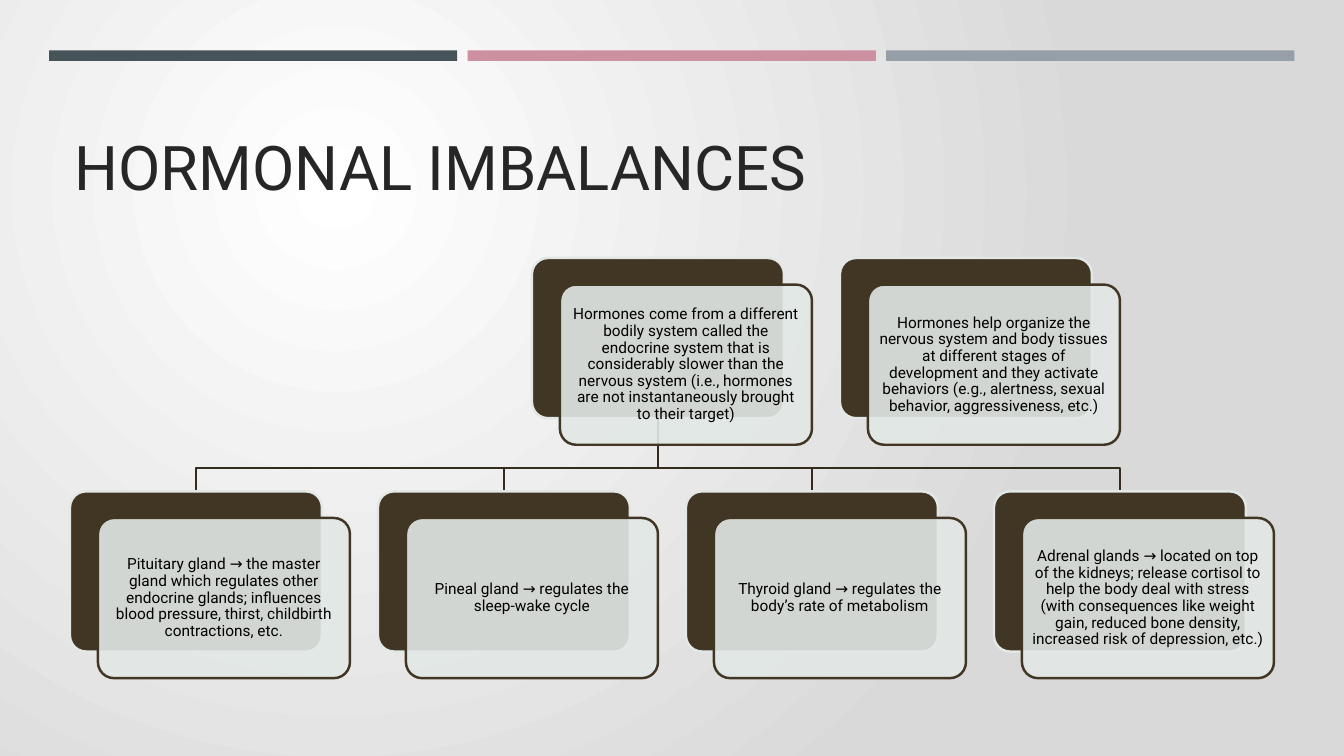
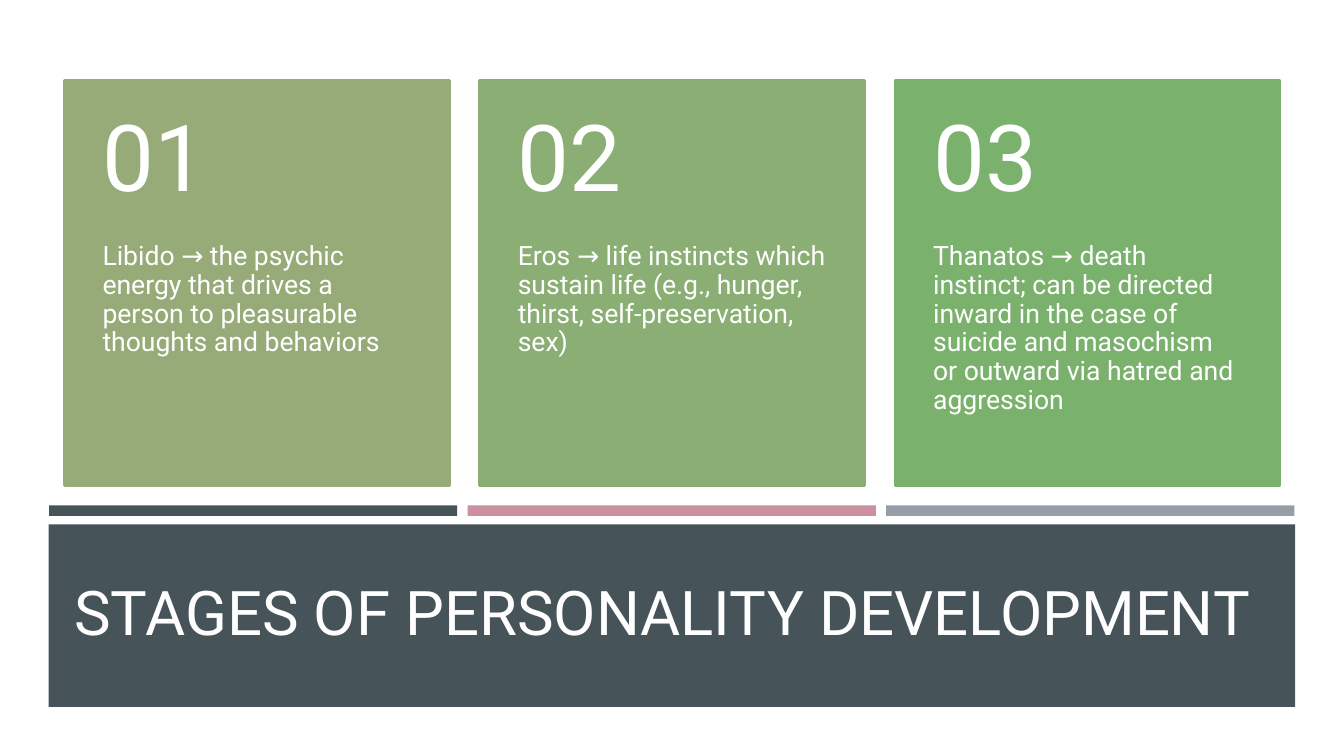
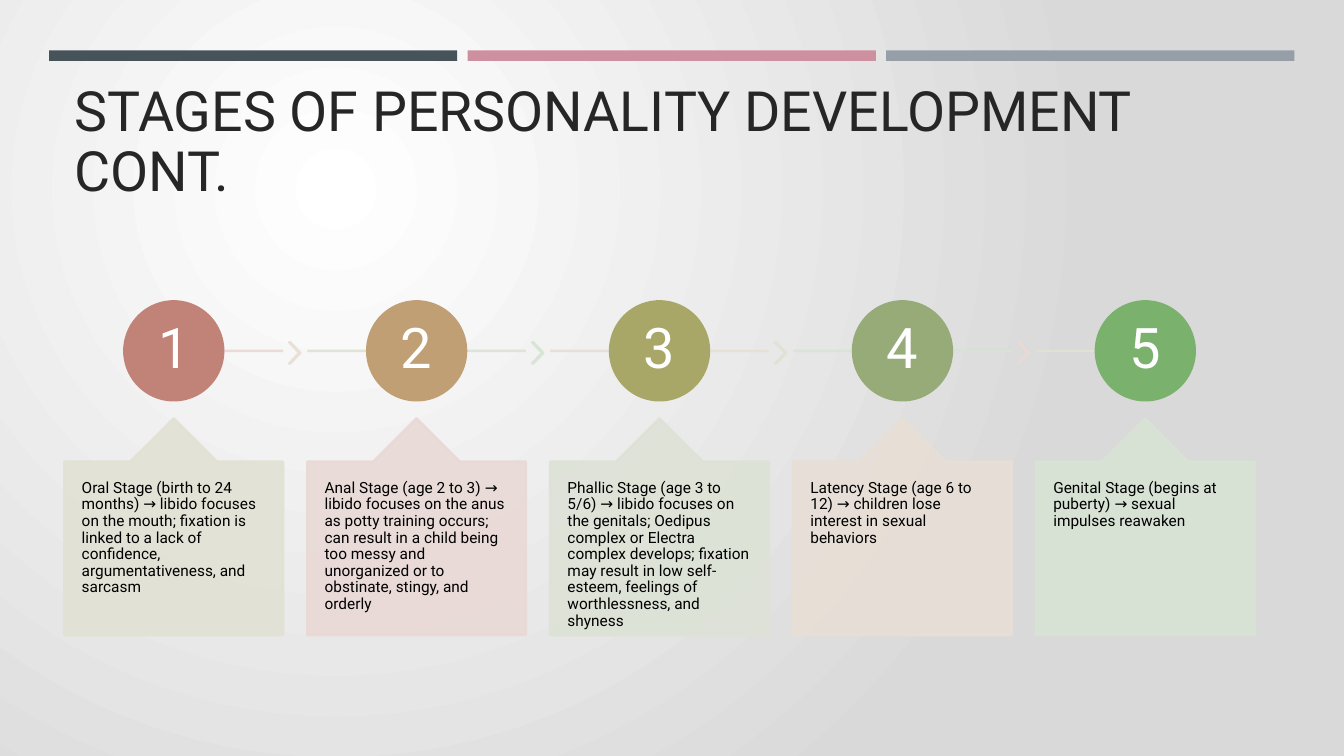
from dataclasses import dataclass

from lxml.etree import SubElement
from pptx import Presentation
from pptx.dml.color import RGBColor
from pptx.enum.shapes import MSO_CONNECTOR, MSO_SHAPE
from pptx.enum.text import MSO_ANCHOR, PP_ALIGN
from pptx.oxml.ns import qn
from pptx.util import Pt


@dataclass(frozen=True)
class Theme:
    font: str = "Roboto"
    white: str = "FFFFFF"
    black: str = "000000"
    title_ink: str = "262626"
    title_light: str = "FFFEFF"
    backdrop_edge: str = "D9D9D9"
    slate: str = "465359"
    bars: tuple = ("465359", "CC90A0", "969FA7")
    brown: str = "413524"
    branch: str = "342A1D"
    mist: str = "E2E8E6"
    panels: tuple = ("96AB78", "8AAE73", "7AB16D")
    stages: tuple = ("C18377", "C09F74", "A8A768", "96AB78", "7AB16D")
    tints: tuple = ("E9D9D6", "E8DFD6", "E1E1D4", "DDE2D6", "D7E4D4")
    title_size: float = 44
    long_title_size: float = 39.6
    panel_number_size: float = 66
    stage_number_size: float = 40
    panel_size: float = 19
    note_size: float = 11
    line_width: float = 1.75
    opacity: int = 90


THEME = Theme()
MARGIN = 46
CONTENT_WIDTH = 868.3

ROOT_NOTES = (
    "Hormones come from a different bodily system called the endocrine system that is "
    "considerably slower than the nervous system (i.e., hormones are not instantaneously "
    "brought to their target)",
    "Hormones help organize the nervous system and body tissues at different stages of "
    "development and they activate behaviors (e.g., alertness, sexual behavior, "
    "aggressiveness, etc.)",
)
GLAND_NOTES = (
    "Pituitary gland → the master gland which regulates other endocrine glands; influences "
    "blood pressure, thirst, childbirth contractions, etc.",
    "Pineal gland → regulates the sleep-wake cycle",
    "Thyroid gland → regulates the body’s rate of metabolism",
    "Adrenal glands → located on top of the kidneys; release cortisol to help the body deal "
    "with stress (with consequences like weight gain, reduced bone density, increased risk "
    "of depression, etc.)",
)
INSTINCTS = (
    "Libido → the psychic energy that drives a person to pleasurable thoughts and behaviors",
    "Eros → life instincts which sustain life (e.g., hunger, thirst, self-preservation, sex)",
    "Thanatos → death instinct; can be directed inward in the case of suicide and masochism "
    "or outward via hatred and aggression",
)
STAGE_NOTES = (
    "Oral Stage (birth to 24 months) → libido focuses on the mouth; fixation is linked to a "
    "lack of confidence, argumentativeness, and sarcasm",
    "Anal Stage (age 2 to 3) → libido focuses on the anus as potty training occurs; can "
    "result in a child being too messy and unorganized or to obstinate, stingy, and orderly",
    "Phallic Stage (age 3 to 5/6) → libido focuses on the genitals; Oedipus complex or "
    "Electra complex develops; fixation may result in low self-esteem, feelings of "
    "worthlessness, and shyness",
    "Latency Stage (age 6 to 12) → children lose interest in sexual behaviors",
    "Genital Stage (begins at puberty) → sexual impulses reawaken",
)


def rgb(value):
    return RGBColor.from_string(value)


def points(*lengths):
    return [Pt(length) for length in lengths]


def apply_format(target, values):
    for name, value in values.items():
        setattr(target, name, value)


def set_opacity(shape, percent):
    for color in shape.element.spPr.iter(qn("a:srgbClr")):
        SubElement(color, qn("a:alpha"), val=str(percent * 1000))


def set_line(shape, color):
    shape.line.color.rgb = rgb(color)
    shape.line.width = Pt(THEME.line_width)


def add_block(page, kind, area, fill, line=None, opacity=None, adjust=()):
    shape = page.shapes.add_shape(kind, *points(*area))
    shape.shadow.inherit = False
    shape.fill.solid()
    shape.fill.fore_color.rgb = rgb(fill)
    if line:
        set_line(shape, line)
    else:
        shape.line.fill.background()
    for index, value in enumerate(adjust):
        shape.adjustments[index] = value
    if opacity:
        set_opacity(shape, opacity)
    return shape


def write(box, words, size, color, align=PP_ALIGN.LEFT, anchor=MSO_ANCHOR.MIDDLE,
          insets=(7.2, 3.6, 7.2, 3.6)):
    """Set the text of a box; insets run left, top, right, bottom."""
    frame = box.text_frame
    sides = ("margin_left", "margin_top", "margin_right", "margin_bottom")
    apply_format(frame, dict(zip(sides, points(*insets))))
    apply_format(frame, {"word_wrap": True, "vertical_anchor": anchor})
    para = frame.paragraphs[0]
    apply_format(para, {"alignment": align, "line_spacing": 0.9})
    span = para.add_run()
    span.text = words
    apply_format(span.font, {"name": THEME.font, "size": Pt(size)})
    span.font.color.rgb = rgb(color)


def add_text(page, area, words, size, color, **layout):
    write(page.shapes.add_textbox(*points(*area)), words, size, color, **layout)


def add_bars(page, top):
    for index, color in enumerate(THEME.bars):
        add_block(page, MSO_SHAPE.RECTANGLE, (35 + 299 * index, top, 291.6, 7.5), color)


def set_radial_background(page):
    fill = page.background.fill
    fill.gradient()
    for stop, color in zip(fill.gradient_stops, (THEME.white, THEME.backdrop_edge)):
        stop.color.rgb = rgb(color)
    gradient = page.element.find(".//" + qn("a:gradFill"))
    gradient.remove(gradient.find(qn("a:lin")))
    circle = SubElement(gradient, qn("a:path"), {"path": "circle"})
    SubElement(circle, qn("a:fillToRect"), l="50000", t="50000", r="100000", b="100000")


def add_page(deck):
    return deck.slides.add_slide(deck.slide_layouts[6])


def add_titled_page(deck, title, size):
    page = add_page(deck)
    set_radial_background(page)
    add_bars(page, 36)
    add_text(page, (MARGIN, 55.5, CONTENT_WIDTH, 93.5), title, size, THEME.title_ink,
             anchor=MSO_ANCHOR.BOTTOM)
    return page


def add_branch(page, start, end, bend):
    """Draw a line that goes down to the bend, across, and down to the end."""
    corners = [(start[0], bend), (end[0], bend), end]
    builder = page.shapes.build_freeform(*points(*start), scale=1.0)
    builder.add_line_segments([points(*corner) for corner in corners], close=False)
    branch = builder.convert_to_shape()
    branch.shadow.inherit = False
    branch.fill.background()
    set_line(branch, THEME.branch)


def add_layered_card(page, left, top, width, height, words):
    kind = MSO_SHAPE.ROUNDED_RECTANGLE
    add_block(page, kind, (left, top, width, height), THEME.brown, THEME.mist, adjust=[0.1])
    front = add_block(page, kind, (left + 20, top + 19, width, height), THEME.mist,
                      THEME.brown, adjust=[0.1])
    front_color = front.element.spPr.find(qn("a:solidFill")).find(qn("a:srgbClr"))
    SubElement(front_color, qn("a:alpha"), val=str(THEME.opacity * 1000))
    write(front, words, THEME.note_size, THEME.black, align=PP_ALIGN.CENTER,
          insets=(3.6, 3.6, 3.6, 3.6))


def add_tint_line(page, start, end, y, color):
    line = page.shapes.add_connector(MSO_CONNECTOR.STRAIGHT, *points(start, y, end, y))
    set_line(line, color)
    set_opacity(line, THEME.opacity)
    SubElement(line.element.spPr, qn("a:effectLst"))


def build_hormones(deck):
    page = add_titled_page(deck, "HORMONAL IMBALANCES", THEME.title_size)
    left, pitch, width, height = 50, 220, 180, 114.4
    root_top, gland_top = 184.3, 351
    root_lefts = [left + pitch * (index + 1.5) for index in range(len(ROOT_NOTES))]
    gland_lefts = [left + pitch * index for index in range(len(GLAND_NOTES))]
    fork = (root_lefts[0] + width / 2, root_top + height)
    for gland_left in reversed(gland_lefts):
        add_branch(page, fork, (gland_left + width / 2, gland_top), 334.5)
    for lefts, top, notes in ((root_lefts, root_top, ROOT_NOTES),
                              (gland_lefts, gland_top, GLAND_NOTES)):
        for card_left, words in zip(lefts, notes):
            add_layered_card(page, card_left, top, width, height, words)


def build_instincts(deck):
    page = add_page(deck)
    page.background.fill.solid()
    page.background.fill.fore_color.rgb = rgb(THEME.white)
    add_bars(page, 361)
    add_block(page, MSO_SHAPE.RECTANGLE, (34.8, 374.5, 890.4, 130.5), THEME.slate)
    add_text(page, (MARGIN, 390.5, CONTENT_WIDTH, 98), "STAGES OF PERSONALITY DEVELOPMENT",
             THEME.title_size, THEME.title_light)
    top, width, height, number_height = 57.4, 275, 289.6, 116
    pitch = (CONTENT_WIDTH - width) / (len(INSTINCTS) - 1)
    for index, (words, color) in enumerate(zip(INSTINCTS, THEME.panels)):
        left = MARGIN + pitch * index
        panel = add_block(page, MSO_SHAPE.RECTANGLE, (left, top, width, height), color, color)
        write(panel, words, THEME.panel_size, THEME.white, anchor=MSO_ANCHOR.TOP,
              insets=(27.2, number_height, 27.2, 26))
        add_text(page, (left, top, width, number_height), f"{index + 1:02}",
                 THEME.panel_number_size, THEME.white, insets=(27.2, 13, 27.2, 13))


def build_stages(deck):
    page = add_titled_page(deck, "STAGES OF PERSONALITY DEVELOPMENT CONT.",
                           THEME.long_title_size)
    pitch, width, circle = 173.5, 156.2, 70.6
    last = len(STAGE_NOTES) - 1
    for index, (words, color) in enumerate(zip(STAGE_NOTES, THEME.stages)):
        left = MARGIN + pitch * index
        middle = left + width / 2
        line_tint, chevron_tint, note_tint = (
            THEME.tints[(3 * index + part) % len(THEME.tints)] for part in range(3))
        add_tint_line(page, left if index else middle,
                      left + width if index < last else middle, 250.6, line_tint)
        if index < last:
            add_block(page, MSO_SHAPE.CHEVRON, (left + 160.6, 244.5, 8, 15.1),
                      chevron_tint, chevron_tint, THEME.opacity, [0.9])
        disc = add_block(page, MSO_SHAPE.OVAL, (middle - circle / 2, 215.3, circle, circle),
                         color, color)
        write(disc, str(index + 1), THEME.stage_number_size, THEME.white,
              align=PP_ALIGN.CENTER, insets=(2.9, 2.9, 2.9, 2.9))
        note = add_block(page, MSO_SHAPE.UP_ARROW_CALLOUT, (left, 298.8, width, 154.8),
                         note_tint, note_tint, THEME.opacity, [0.5, 0.2, 0.2, 1])
        write(note, words, THEME.note_size, THEME.black, anchor=MSO_ANCHOR.TOP,
              insets=(12.4, 13, 12.4, 0))


def main():
    deck = Presentation()
    apply_format(deck, {"slide_width": Pt(960), "slide_height": Pt(540)})
    build_hormones(deck)
    build_instincts(deck)
    build_stages(deck)
    deck.save("out.pptx")


if __name__ == "__main__":
    main()
